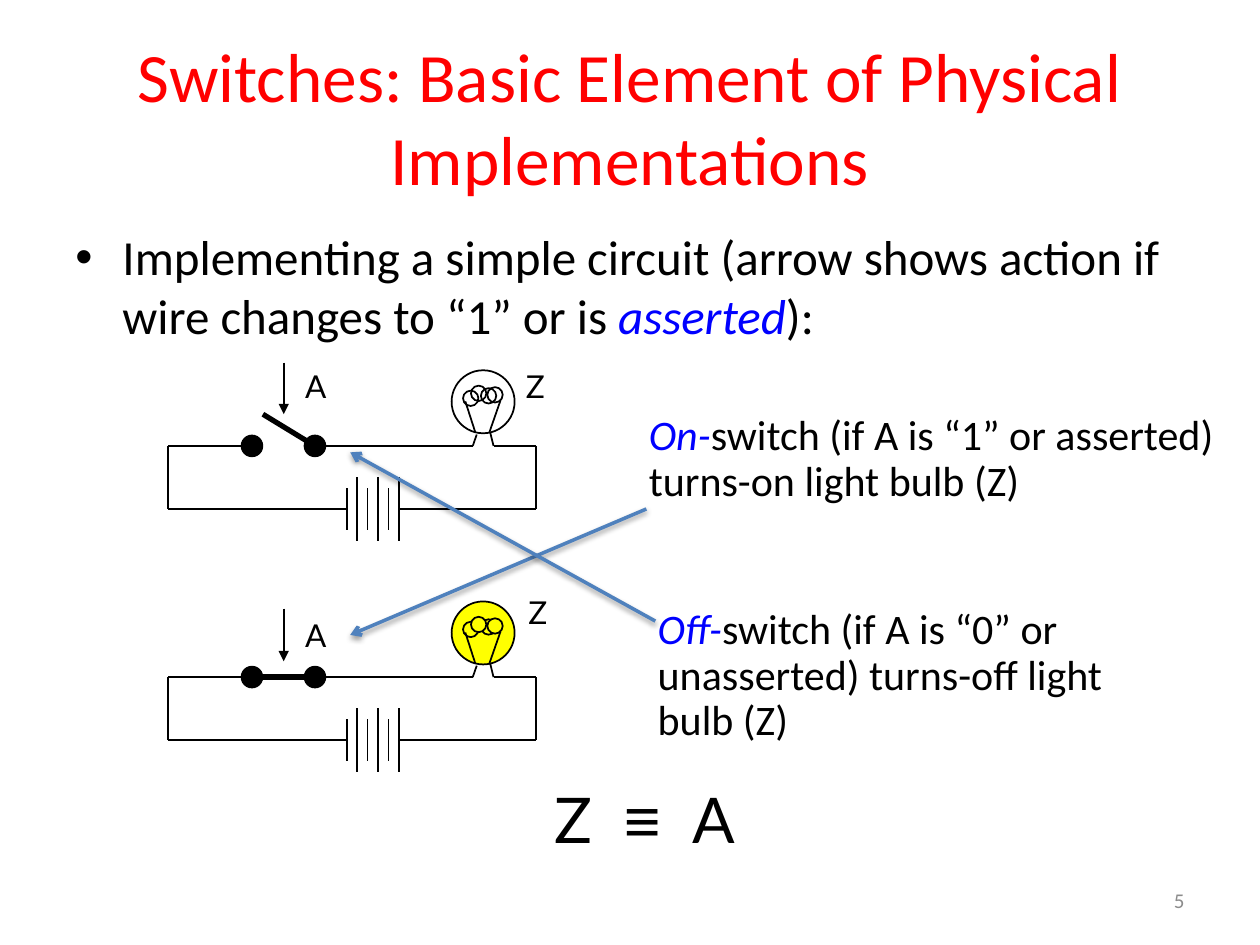
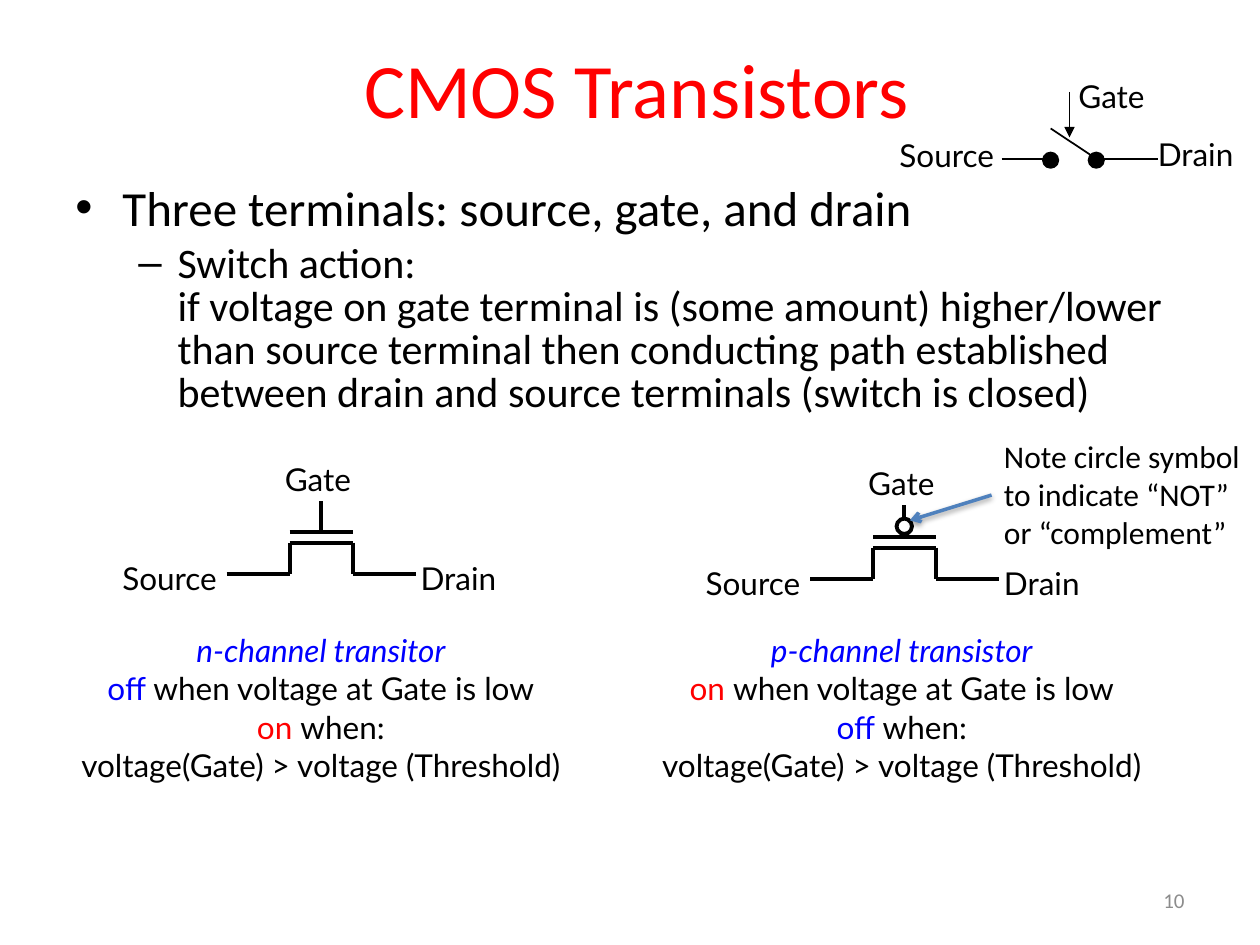
"""Build two lecture slides on switches and CMOS transistors."""
from itertools import pairwise

from lxml.etree import SubElement
from pptx import Presentation
from pptx.dml.color import RGBColor
from pptx.enum.shapes import MSO_CONNECTOR as Connector, MSO_SHAPE as Preset
from pptx.enum.text import MSO_ANCHOR as Anchor, PP_ALIGN as Align
from pptx.oxml.ns import qn
from pptx.util import Cm, Pt

BLACK = RGBColor(0, 0, 0)
WHITE = RGBColor(255, 255, 255)
RED = RGBColor(255, 0, 0)
BLUE = RGBColor(0, 0, 255)
YELLOW = RGBColor(255, 255, 0)
GREY = RGBColor(0x8C, 0x8C, 0x8C)
STEEL = RGBColor(0x4F, 0x81, 0xBD)

TITLE = dict(name="Calibri", size=Pt(44), color=RED)
LONG_TITLE = TITLE | dict(size=Pt(39.6))
BODY = dict(name="Calibri", size=Pt(28), color=BLACK)
SUBBODY = BODY | dict(size=Pt(24))
TERM = dict(color=BLUE, italic=True)
NOTE = BODY | dict(size=Pt(18))
LABEL = NOTE | dict(name="Lato")
FORMULA = LABEL | dict(size=Pt(36))
NUMBER = dict(name="Calibri", size=Pt(12), color=GREY)

CENTRED = dict(alignment=Align.CENTER)
RIGHT = dict(alignment=Align.RIGHT)
LOOSE = dict(line_spacing=Pt(26))
SPACED = LOOSE | dict(space_before=Pt(11))
TIGHT = CENTRED | dict(line_spacing=Pt(22))
BULLET = dict(space_before=Pt(5.6))
DASH = dict(space_before=Pt(4.8), line_spacing=0.85)
MIDDLE = dict(vertical_anchor=Anchor.MIDDLE, word_wrap=True)
WRAPPED = dict(word_wrap=True)
SNUG = dict(word_wrap=False, margin_left=Cm(0.05), margin_right=Cm(0.05),
            margin_top=Cm(0.08), margin_bottom=Cm(0.08))

SWITCHES_TITLE = "Switches: Basic Element of Physical Implementations"
SWITCHES_BODY = [
    ("•", 0.95, -0.95, BULLET, [
        ("Implementing a simple circuit (arrow shows action if wire changes to “1” or is ", BODY),
        ("asserted", BODY | TERM),
        ("):", BODY)])]
EQUIVALENCE = [("Z", FORMULA), (" ", FORMULA, 9), ("≡", FORMULA | dict(name="Arial")),
               (" ", FORMULA, 9), ("A", FORMULA)]
CIRCUITS = [
    dict(origin=(3.39, 8.99), lever=(1.91, -0.64), press=(-1.68, -0.64),
         a=(2.71, -1.83), z=(7.16, -1.83), bulb=WHITE, coil=None),
    dict(origin=(3.39, 13.65), lever=(1.69, 0), press=(-1.38, -0.32),
         a=(2.71, -1.46), z=(7.21, -1.92), bulb=YELLOW, coil=YELLOW),
]
REMARKS = [
    ("On-", "switch (if A is “1” or asserted)\nturns-on light bulb (Z)",
     (13.03, 8.26), [(13.03, 10.26), (7.06, 12.8)]),
    ("Off-", "switch (if A is “0” or\nunasserted) turns-off light\nbulb (Z)",
     (13.21, 12.17), [(13.21, 12.52), (7.06, 9.12)]),
]
CIRCUIT_WIRES = [
    [(2.96, 0), (6.14, 0), (6.22, -0.23)],
    [(6.49, -0.28), (6.56, 0), (7.41, 0), (7.41, 1.27), (4.66, 1.27)],
    [(3.6, 1.27), (0, 1.27), (0, 0), (1.69, 0)],
]
FILAMENT_WIRES = [[(5.99, -0.9), (6.19, -0.28)], [(6.7, -0.92), (6.47, -0.26)]]
COILS = [(6.1, -0.96), (6.46, -1.01), (6.59, -1.03), (6.26, -1.06)]
PLATES, PLATE_GAP = 6, 0.21

CMOS_TITLE = "CMOS Transistors"
CMOS_BODY = [
    ("•", 0.95, -0.95, BULLET, [("Three terminals: source, gate, and drain", BODY)]),
    ("–", 2.06, -0.79, DASH, [
        ("Switch action:\nif voltage on gate terminal is (some amount) higher/lower than source "
         "terminal then conducting path established between drain and source terminals "
         "(switch is closed)", SUBBODY)]),
]
TRANSISTORS = [
    dict(origin=(4.57, 11.58), caption=(1.07, 12.62), inverted=False,
         kind="n-channel transitor", low=("off", BLUE), high=("on", RED)),
    dict(origin=(16.33, 11.68), caption=(12.78, 12.62), inverted=True,
         kind="p-channel transistor", low=("on", RED), high=("off", BLUE)),
]
TRANSISTOR_WIRES = [
    [(0, 0), (1.27, 0), (1.27, -0.64), (2.54, -0.64), (2.54, 0), (3.81, 0)],
    [(1.27, -0.85), (2.54, -0.85)],
    [(1.9, -0.85), (1.9, -1.49)],
]
TERMINALS = [
    ("Gate", (0.79, -2.41), TIGHT),
    ("Source", (-2.2, -0.41), TIGHT),
    ("Drain", (3.86, -0.41), dict(line_spacing=Pt(22))),
]
THRESHOLD = "voltage(Gate) > voltage (Threshold)"
CIRCLE_NOTE = "Note circle symbol to indicate “NOT” or “complement”"
MINI_WIRES = [[(20.19, 3.2), (21.13, 3.2)], [(21.18, 2.59), (22.07, 3.18)],
              [(22.12, 3.2), (23.34, 3.2)]]
MINI_CONTACTS = [(21.18, 3.23), (22.1, 3.23)]
MINI_LABELS = [("Gate", (21.69, 1.32), LOOSE), ("Drain", (23.29, 2.49), LOOSE),
               ("Source", (17.99, 2.51), LOOSE | RIGHT)]


def assign(target, values):
    for name, value in values.items():
        setattr(target, name, value)


def shifted(origin, points):
    return [(origin[0] + x, origin[1] + y) for x, y in points]


def write_runs(paragraph, runs):
    for text, style, *spacing in runs:
        for index, line in enumerate(text.split("\n")):
            if index:
                paragraph.add_line_break()
            if not line:
                continue
            run = paragraph.add_run()
            run.text = line
            assign(run.font, {k: v for k, v in style.items() if k != "color"})
            run.font.color.rgb = style["color"]
            if spacing:
                run._r.get_or_add_rPr().set("spc", str(spacing[0] * 100))


def add_text(slide, box, paragraphs, frame_format=SNUG):
    frame = slide.shapes.add_textbox(*map(Cm, box)).text_frame
    assign(frame, frame_format)
    for index, (layout, runs) in enumerate(paragraphs):
        paragraph = frame.add_paragraph() if index else frame.paragraphs[0]
        assign(paragraph, layout)
        write_runs(paragraph, runs)
    return frame


def add_label(slide, text, place, layout=LOOSE):
    add_text(slide, (*place, 2.1, 1.24), [(layout, [(text, LABEL)])])


def add_body(slide, box, items):
    frame = add_text(slide, box, [(layout, runs) for *_, layout, runs in items], WRAPPED)
    for paragraph, (mark, margin, indent, *_) in zip(frame.paragraphs, items):
        properties = paragraph._p.get_or_add_pPr()
        properties.set("marL", str(Cm(margin)))
        properties.set("indent", str(Cm(indent)))
        SubElement(properties, qn("a:buFont"), typeface="Arial")
        SubElement(properties, qn("a:buChar"), char=mark)


def add_wire(slide, points, width=1, color=BLACK, head=None, shadow=False):
    for start, end in pairwise(points):
        wire = slide.shapes.add_connector(Connector.STRAIGHT, *map(Cm, (*start, *end)))
        wire.line.color.rgb = color
        wire.line.width = Pt(width)
        if head:
            SubElement(wire.line._get_or_add_ln(), qn("a:tailEnd"), type=head)
        effects = SubElement(wire._element.spPr, qn("a:effectLst"))
        if shadow:
            cast = SubElement(effects, qn("a:outerShdw"), blurRad="40000", dist="20000",
                              dir="5400000", rotWithShape="0")
            tint = SubElement(cast, qn("a:srgbClr"), val=str(BLACK))
            SubElement(tint, qn("a:alpha"), val="38000")


def add_pointer(slide, points):
    add_wire(slide, points, 2, STEEL, "arrow", True)


def add_circle(slide, centre, diameter, fill, width=1):
    x, y = (value - diameter / 2 for value in centre)
    circle = slide.shapes.add_shape(Preset.OVAL, *map(Cm, (x, y, diameter, diameter)))
    circle.shadow.inherit = False
    if fill is None:
        circle.fill.background()
    else:
        circle.fill.solid()
        circle.fill.fore_color.rgb = fill
    circle.line.color.rgb = BLACK
    circle.line.width = Pt(width)


def add_slide(deck, title, title_style, title_place, number):
    slide = deck.slides.add_slide(deck.slide_layouts[6])
    add_text(slide, (*title_place, 22.86, 3.18), [(CENTRED, [(title, title_style)])], MIDDLE)
    add_text(slide, (18.2, 17.65, 5.93, 1.01), [(RIGHT, [(number, NUMBER)])], MIDDLE)
    return slide


def add_circuit(slide, circuit):
    def at(*points):
        return shifted(circuit["origin"], points)

    for wire in CIRCUIT_WIRES:
        add_wire(slide, at(*wire))
    add_circle(slide, at((6.35, -0.89))[0], 1.27, circuit["bulb"])
    for coil in at(*COILS):
        add_circle(slide, coil, 0.31, circuit["coil"])
    for wire in FILAMENT_WIRES:
        add_wire(slide, at(*wire))
    for plate in range(PLATES):
        x, reach = 3.6 + plate * PLATE_GAP, 0.64 if plate % 2 else 0.42
        add_wire(slide, at((x, 1.27 - reach), (x, 1.27 + reach)))
    add_wire(slide, at((2.96, 0), circuit["lever"]), 3)
    for contact in at((1.69, 0), (2.96, 0)):
        add_circle(slide, contact, 0.42, BLACK)
    add_wire(slide, at(*((2.33, y) for y in circuit["press"])), head="triangle")
    for name in "AZ":
        add_label(slide, name, at(circuit[name.lower()])[0])


def add_transistor(slide, transistor):
    origin = transistor["origin"]
    for wire in TRANSISTOR_WIRES:
        add_wire(slide, shifted(origin, wire), 2.25)
    if transistor["inverted"]:
        add_circle(slide, shifted(origin, [(1.9, -1.07)])[0], 0.31, WHITE, 2.25)
    for name, offset, layout in TERMINALS:
        add_label(slide, name, shifted(origin, [offset])[0], layout)
    (low, low_color), (high, high_color) = transistor["low"], transistor["high"]
    add_text(slide, (*transistor["caption"], 10.8, 4.7), [
        (TIGHT, [(transistor["kind"] + "\n", LABEL | TERM),
                 (low + " ", LABEL | dict(color=low_color)),
                 ("when voltage at Gate is low\n", LABEL),
                 (high + " ", LABEL | dict(color=high_color)),
                 ("when:", LABEL)]),
        (TIGHT, [(THRESHOLD, LABEL)])])


def build_switches(deck):
    slide = add_slide(deck, SWITCHES_TITLE, LONG_TITLE, (1.27, 0.76), "5")
    add_body(slide, (1.27, 4.45, 22.86, 2.62), SWITCHES_BODY)
    for circuit in CIRCUITS:
        add_circuit(slide, circuit)
    for state, action, place, pointer in REMARKS:
        add_text(slide, (*place, 12, 2.84),
                 [(SPACED, [(state, SUBBODY | TERM), (action, SUBBODY)])])
        add_pointer(slide, pointer)
    add_text(slide, (10.92, 16.21, 4.32, 1.3), [(SPACED, EQUIVALENCE)], dict(word_wrap=False))


def build_cmos(deck):
    slide = add_slide(deck, CMOS_TITLE, TITLE, (1.4, 0.18), "10")
    add_body(slide, (1.27, 3.45, 22.86, 5.23), CMOS_BODY)
    for transistor in TRANSISTORS:
        add_transistor(slide, transistor)
    add_text(slide, (19.99, 8.69, 5.41, 2.57), [({}, [(CIRCLE_NOTE, NOTE)])], WRAPPED)
    add_pointer(slide, [(19.99, 9.98), (18.34, 10.49)])
    for wire in MINI_WIRES:
        add_wire(slide, wire)
    add_wire(slide, [(21.56, 1.85), (21.56, 2.77)], head="triangle")
    for contact in MINI_CONTACTS:
        add_circle(slide, contact, 0.31, BLACK)
    for name, place, layout in MINI_LABELS:
        add_label(slide, name, place, layout)


def main():
    deck = Presentation()
    deck.slide_width, deck.slide_height = Cm(25.4), Cm(19.05)
    build_switches(deck)
    build_cmos(deck)
    deck.save("out.pptx")


if __name__ == "__main__":
    main()
